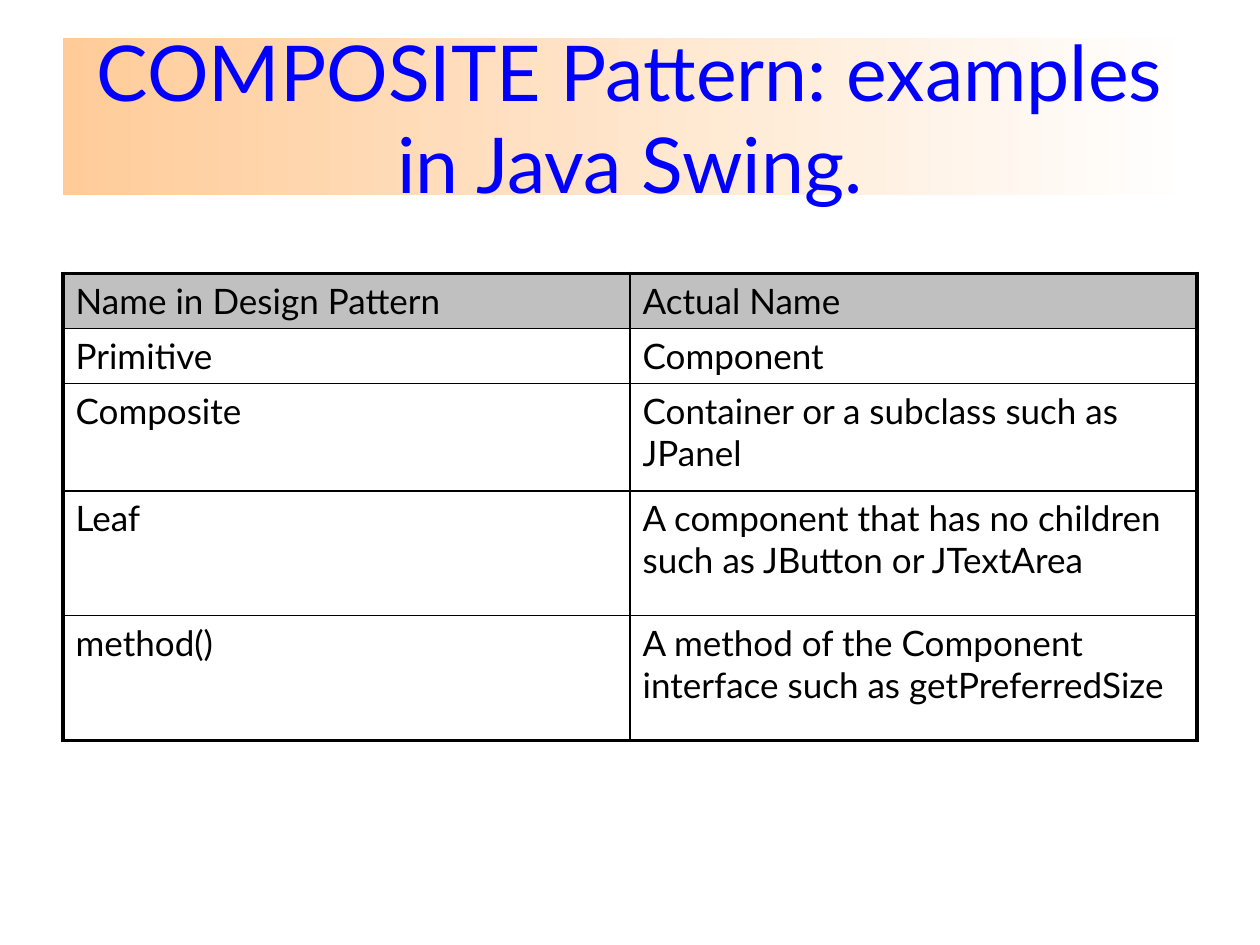
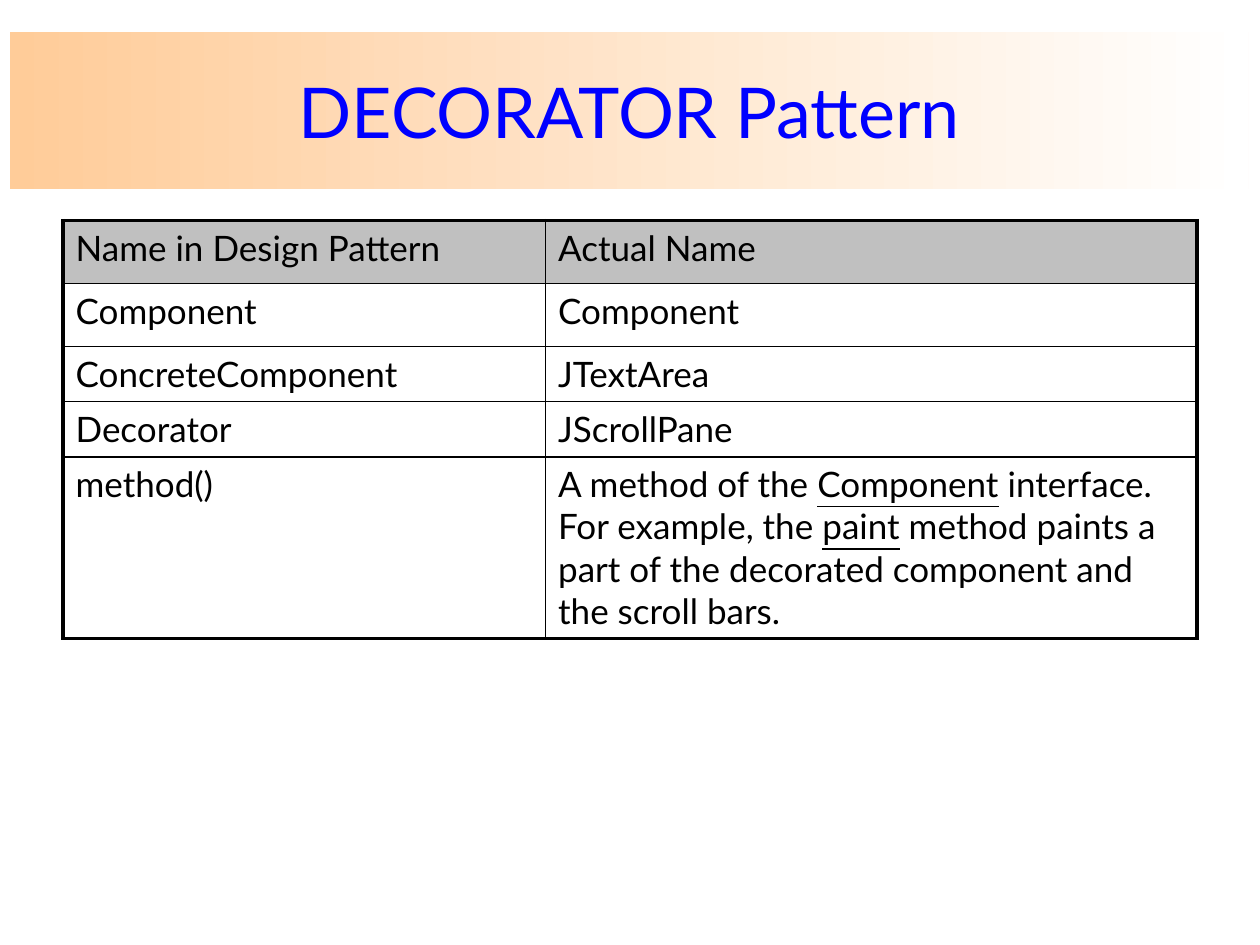
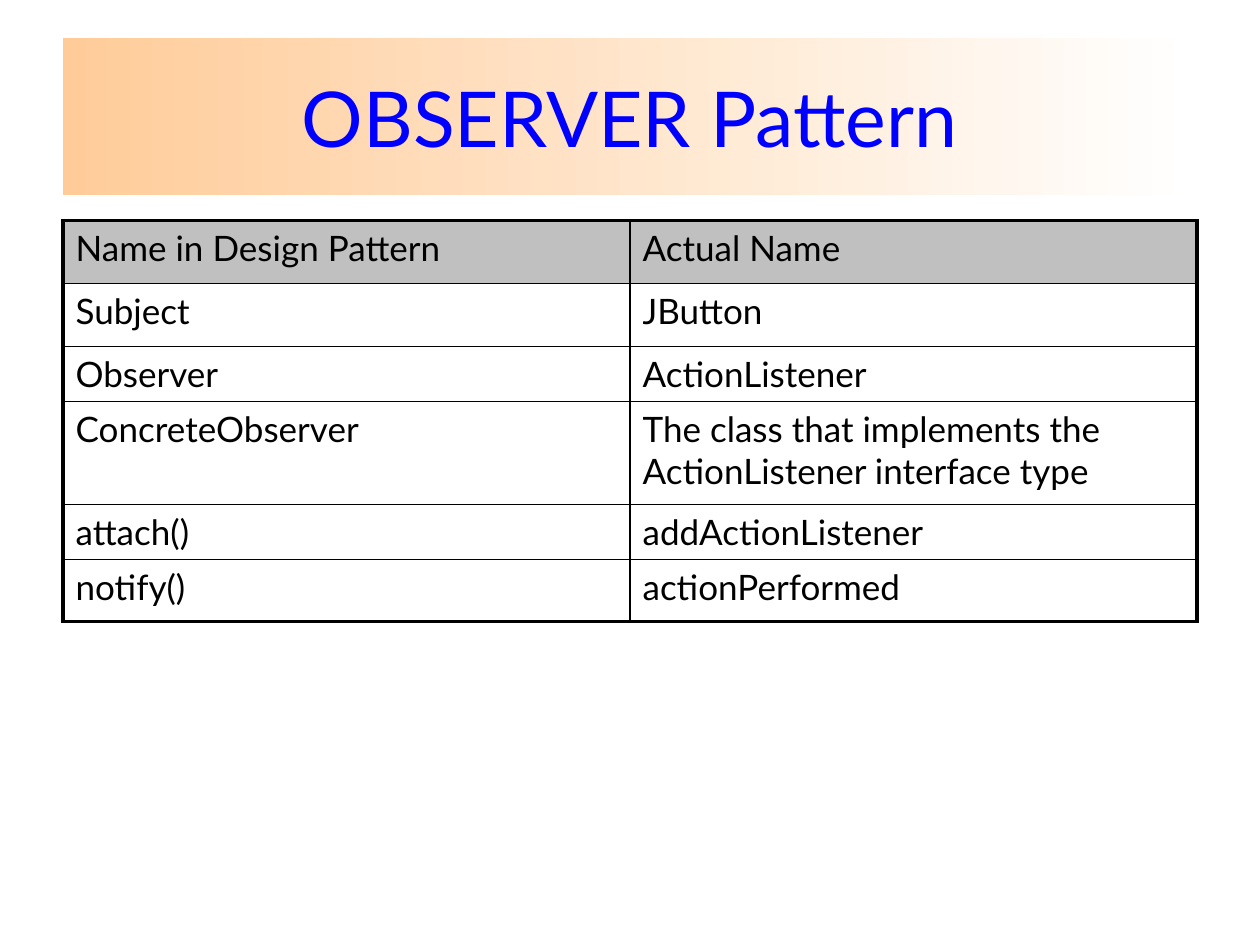
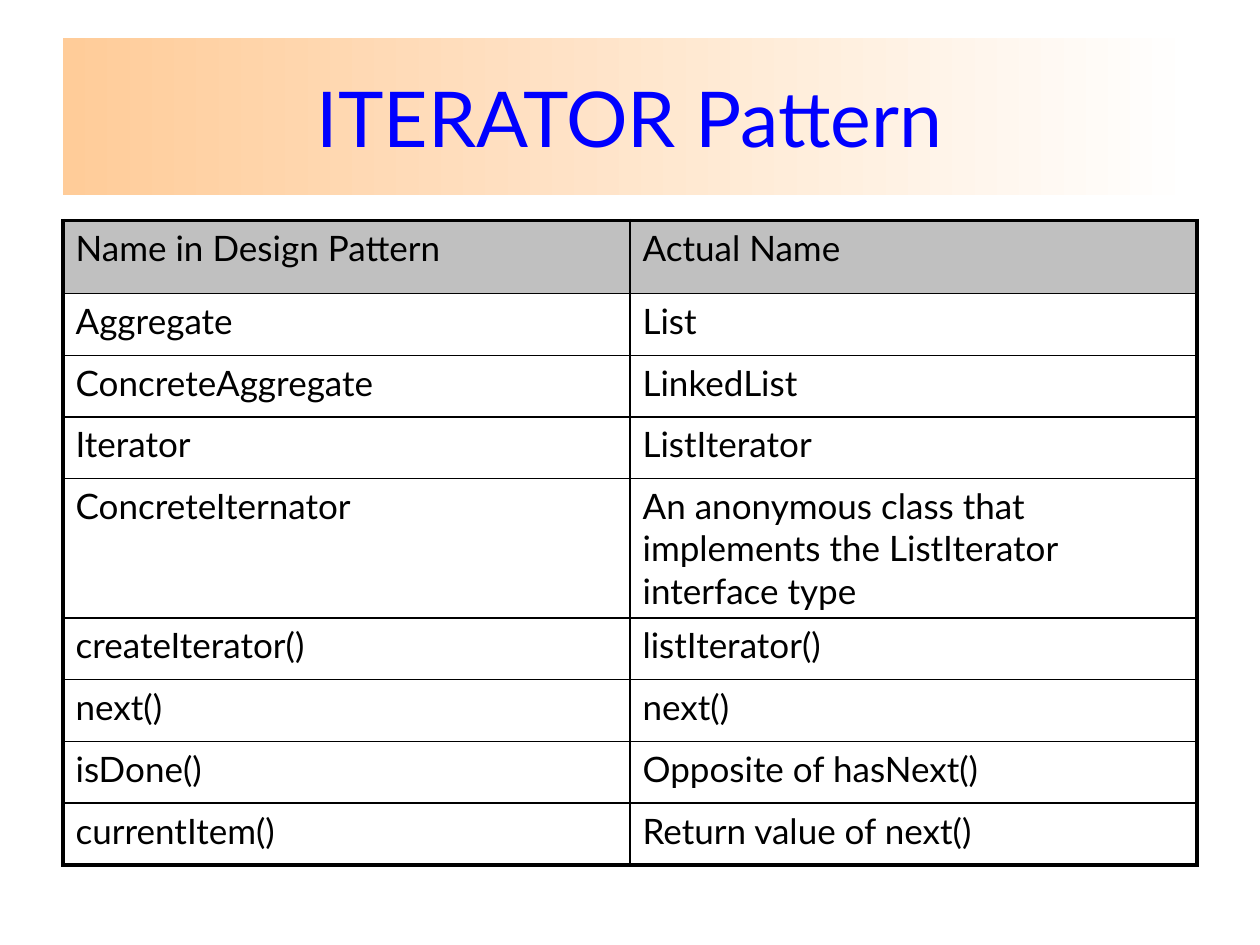
from lxml import etree
from pptx import Presentation
from pptx import util as u
from pptx.dml import color as colors
from pptx.enum import shapes, text
from pptx.oxml import ns

EMU_PER_PX = 9144
BLANK_LAYOUT = 6


def px(length):
    return u.Emu(length * EMU_PER_PX)


def rgb(value):
    return colors.RGBColor.from_string(value)


class Deck:
    font = "Lato"
    title_color = "0000FF"
    band_start, band_end = "FFCC99", "FFFFFF"
    ink = "000000"
    header_fill = "C0C0C0"
    cell_size = 20
    outer_line, inner_line = 2.25, 1

    def __init__(self, width, height):
        self.presentation = Presentation()
        self.presentation.slide_width = px(width)
        self.presentation.slide_height = px(height)
        self.slide = None

    def add_slide(self):
        layout = self.presentation.slide_layouts[BLANK_LAYOUT]
        self.slide = self.presentation.slides.add_slide(layout)

    def run(self, paragraph, words, size, color, underline=None):
        run = paragraph.add_run()
        run.text = words
        run.font.name = self.font
        run.font.size = u.Pt(size)
        run.font.color.rgb = rgb(color)
        run.font.underline = underline

    def title(self, words, left=50, top=30, width=900, height=125, size=44):
        shape = self.slide.shapes.add_shape(
            shapes.MSO_SHAPE.RECTANGLE, px(left), px(top), px(width), px(height))
        shape.shadow.inherit = False
        shape.line.fill.background()
        shape.fill.gradient()
        shape.fill.gradient_angle = 0
        for stop, value in zip(shape.fill.gradient_stops, (self.band_start, self.band_end)):
            stop.color.rgb = rgb(value)
        frame = shape.text_frame
        frame.word_wrap = True
        frame.vertical_anchor = text.MSO_ANCHOR.MIDDLE
        paragraph = frame.paragraphs[0]
        paragraph.alignment = text.PP_ALIGN.CENTER
        self.run(paragraph, words, size, self.title_color)

    def space_before(self, paragraph, percent):
        properties = paragraph._p.get_or_add_pPr()
        spacing = etree.SubElement(properties, ns.qn("a:spcBef"))
        etree.SubElement(spacing, ns.qn("a:spcPct"), val=str(percent * 1000))

    def border(self, cell, side, width):
        properties = cell._tc.get_or_add_tcPr()
        line = etree.SubElement(properties, ns.qn(f"a:ln{side}"), w=str(u.Pt(width)))
        fill = etree.SubElement(line, ns.qn("a:solidFill"))
        etree.SubElement(fill, ns.qn("a:srgbClr"), val=self.ink)

    def cell(self, cell, content, edges, is_header):
        for side in "LRTB":
            self.border(cell, side, self.outer_line if edges[side] else self.inner_line)
        if is_header:
            cell.fill.solid()
            cell.fill.fore_color.rgb = rgb(self.header_fill)
        else:
            cell.fill.background()
        paragraph = cell.text_frame.paragraphs[0]
        self.space_before(paragraph, 20)
        runs = [(content, None)] if isinstance(content, str) else content
        for words, underline in runs:
            self.run(paragraph, words, self.cell_size, self.ink, underline)

    def table(self, names, heights, top=175, widths=(450, 450), left=50):
        rows = [("Name in Design Pattern", "Actual Name"), *names]
        frame = self.slide.shapes.add_table(
            len(rows), len(widths), px(left), px(top), px(sum(widths)), px(sum(heights)))
        table = frame.table
        table.first_row = table.horz_banding = False
        for column, width in zip(table.columns, widths):
            column.width = px(width)
        for row, height in zip(table.rows, heights):
            row.height = px(height)
        for r, contents in enumerate(rows):
            for c, content in enumerate(contents):
                edges = {"L": c == 0, "R": c == len(widths) - 1,
                         "T": r == 0, "B": r == len(rows) - 1}
                self.cell(table.cell(r, c), content, edges, r == 0)


def composite(deck):
    deck.add_slide()
    deck.title("COMPOSITE Pattern: examples in Java Swing.")
    deck.table([
        ("Primitive", "Component"),
        ("Composite", "Container or a subclass such as JPanel"),
        ("Leaf", "A component that has no children such as JButton or JTextArea"),
        ("method()", "A method of the Component interface such as getPreferredSize"),
    ], heights=(43, 44, 85, 99, 99), top=217)


def decorator(deck):
    deck.add_slide()
    deck.title("DECORATOR Pattern", left=8, top=25, width=983, size=40)
    method = [
        ("A method of the ", None),
        ("Component", True),
        (" interface. For example, the ", None),
        ("paint", True),
        (" method paints a part of the decorated component and the scroll bars.", None),
    ]
    deck.table([
        ("Component", "Component"),
        ("ConcreteComponent", "JTextArea"),
        ("Decorator", "JScrollPane"),
        ("method()", method),
    ], heights=(50, 50, 43, 44, 144), widths=(383, 517))


def observer(deck):
    deck.add_slide()
    deck.title("OBSERVER Pattern")
    deck.table([
        ("Subject", "JButton"),
        ("Observer", "ActionListener"),
        ("ConcreteObserver", "The class that implements the ActionListener interface type"),
        ("attach()", "addActionListener"),
        ("notify()", "actionPerformed"),
    ], heights=(50, 50, 43, 82, 43, 49))


def iterator(deck):
    deck.add_slide()
    deck.title("ITERATOR Pattern")
    deck.table([
        ("Aggregate", "List"),
        ("ConcreteAggregate", "LinkedList"),
        ("Iterator", "ListIterator"),
        ("ConcreteIternator",
         "An anonymous class that implements the ListIterator interface type"),
        ("createIterator()", "listIterator()"),
        ("next()", "next()"),
        ("isDone()", "Opposite of hasNext()"),
        ("currentItem()", "Return value of next()"),
    ], heights=(58, *[49] * 3, 110, *[49] * 4))


def main():
    deck = Deck(1000, 750)
    for build in (composite, decorator, observer, iterator):
        build(deck)
    deck.presentation.save("out.pptx")


if __name__ == "__main__":
    main()
